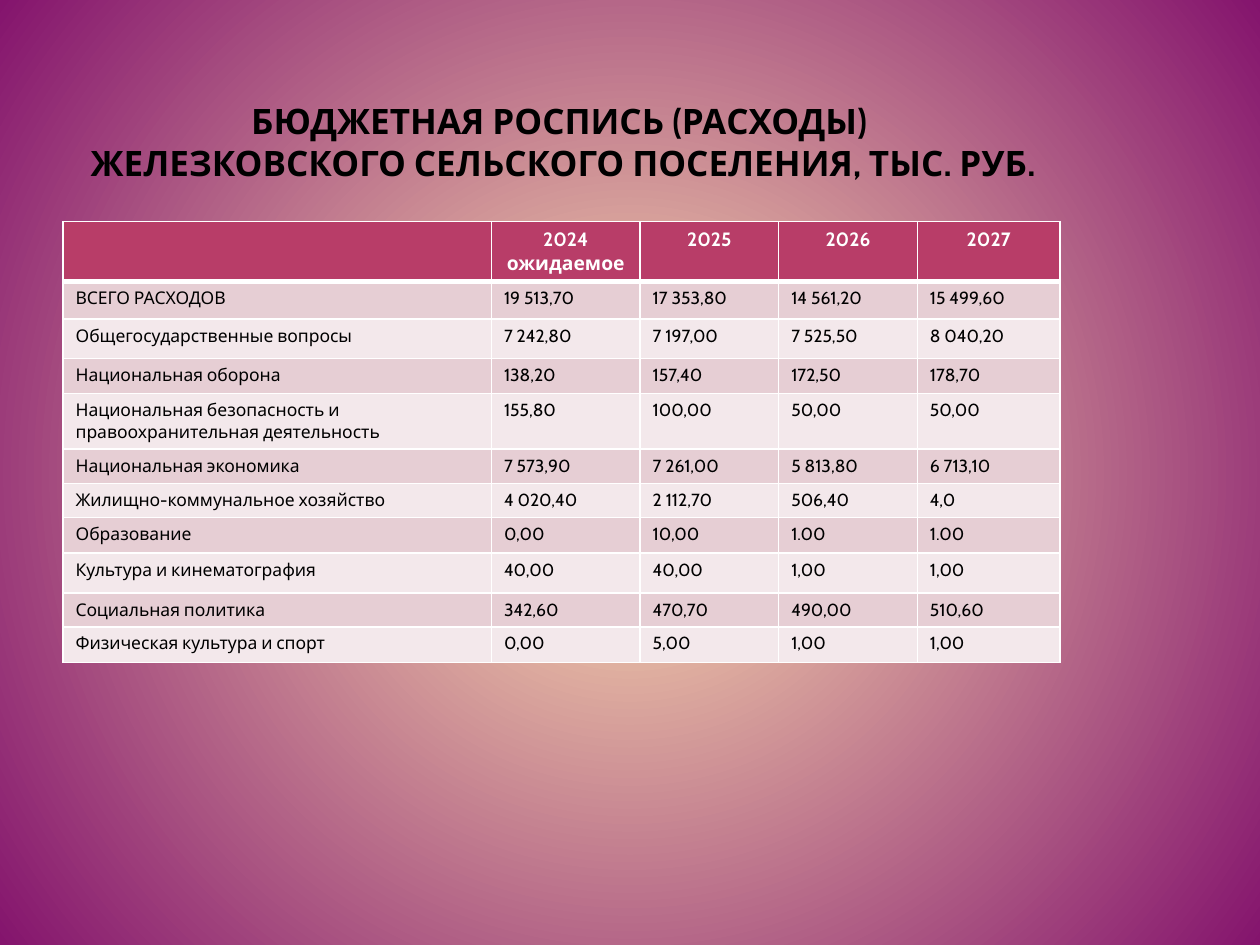
from pptx import Presentation
from pptx.dml.color import RGBColor
from pptx.enum.text import MSO_ANCHOR, MSO_AUTO_SIZE, PP_ALIGN
from pptx.oxml import parse_xml
from pptx.oxml.ns import nsdecls, qn
from pptx.util import Pt

FONT = "Cabin"
CREAM = RGBColor(0xFD, 0xE2, 0xB0)
PURPLE = RGBColor(0x84, 0x14, 0x6D)
CRIMSON = RGBColor(0xB8, 0x3D, 0x68)
BAND_DARK = RGBColor(0xE6, 0xCE, 0xD4)
BAND_LIGHT = RGBColor(0xF3, 0xE8, 0xEB)
BLACK = RGBColor(0, 0, 0)
WHITE = RGBColor(255, 255, 255)

TITLE = "БЮДЖЕТНАЯ РОСПИСЬ (РАСХОДЫ) \vЖЕЛЕЗКОВСКОГО СЕЛЬСКОГО ПОСЕЛЕНИЯ, ТЫС. РУБ."
BUDGET = [
    ("", "2024 ожидаемое", "2025", "2026", "2027"),
    ("ВСЕГО РАСХОДОВ", "19 513,70", "17 353,80", "14 561,20", "15 499,60"),
    ("Общегосударственные вопросы", "7 242,80", "7 197,00", "7 525,50", "8 040,20"),
    ("Национальная оборона", "138,20", "157,40", "172,50", "178,70"),
    ("Национальная безопасность и правоохранительная деятельность",
     "155,80", "100,00", "50,00", "50,00"),
    ("Национальная экономика", "7 573,90", "7 261,00", "5 813,80", "6 713,10"),
    ("Жилищно-коммунальное хозяйство", "4 020,40", "2 112,70", "506,40", "4,0"),
    ("Образование", "0,00", "10,00", "1.00", "1.00"),
    ("Культура и кинематография", "40,00", "40,00", "1,00", "1,00"),
    ("Социальная политика", "342,60", "470,70", "490,00", "510,60"),
    ("Физическая культура и спорт", "0,00", "5,00", "1,00", "1,00"),
]
COLUMN_WIDTHS = [244.8, 85, 79.2, 79.2, 81.6]
ROW_HEIGHTS = [33.9, 21.6, 22.6, 20, 31.6, 19.8, 19.4, 20.4, 22.7, 19.4, 20.4]


def write_text(frame, text, size, color, bold=False, align=PP_ALIGN.LEFT):
    """Put one formatted paragraph into a text frame."""
    para = frame.paragraphs[0]
    para.text = text
    para.alignment = align
    for span in para.runs:
        span.font.name = FONT
        span.font.size = Pt(size)
        span.font.bold = bold
        span.font.color.rgb = color


def paint_background(page):
    """Radial gradient from the centre to the corners."""
    fill = page.background.fill
    fill.gradient()
    for stop, color, position in zip(fill.gradient_stops, (CREAM, PURPLE), (0, 1)):
        stop.color.rgb = color
        stop.position = position
    gradient = page.element.find(".//" + qn("a:gradFill"))
    linear = gradient.find(qn("a:lin"))
    gradient.replace(linear, parse_xml(
        f'<a:path {nsdecls("a")} path="circle">'
        '<a:fillToRect l="50000" t="50000" r="50000" b="50000"/></a:path>'))


def add_title(page):
    box = page.shapes.title
    box.left, box.top, box.width, box.height = Pt(36.7), Pt(37.4), Pt(570), Pt(67.7)
    frame = box.text_frame
    frame.auto_size = MSO_AUTO_SIZE.NONE
    frame.word_wrap = True
    frame.vertical_anchor = MSO_ANCHOR.BOTTOM
    frame.margin_left = frame.margin_right = Pt(3.6)
    frame.margin_top = frame.margin_bottom = 0
    write_text(frame, TITLE, 20, BLACK, bold=True, align=PP_ALIGN.CENTER)


def set_borders(cell, bottom=1, top=1):
    """White cell borders; widths in points."""
    properties = cell._tc.get_or_add_tcPr()
    widths = {"lnL": 1, "lnR": 1, "lnT": top, "lnB": bottom}
    for index, (side, width) in enumerate(widths.items()):
        properties.insert(index, parse_xml(
            f'<a:{side} {nsdecls("a")} w="{Pt(width)}"><a:solidFill>'
            f'<a:srgbClr val="{WHITE}"/></a:solidFill></a:{side}>'))


def add_budget_table(page):
    table = page.shapes.add_table(
        len(BUDGET), len(COLUMN_WIDTHS), Pt(36), Pt(126.7),
        Pt(sum(COLUMN_WIDTHS)), Pt(sum(ROW_HEIGHTS))).table
    for column, width in zip(table.columns, COLUMN_WIDTHS):
        column.width = Pt(width)
    for row, height in zip(table.rows, ROW_HEIGHTS):
        row.height = Pt(height)

    for row_index, values in enumerate(BUDGET):
        header = row_index == 0
        band = BAND_DARK if row_index % 2 else BAND_LIGHT
        for column_index, value in enumerate(values):
            cell = table.cell(row_index, column_index)
            cell.fill.solid()
            cell.fill.fore_color.rgb = CRIMSON if header else band
            set_borders(cell, bottom=3 if header else 1, top=3 if row_index == 1 else 1)
            if header:
                write_text(cell.text_frame, value, 11, WHITE, bold=True,
                           align=PP_ALIGN.CENTER)
            else:
                write_text(cell.text_frame, value, 10, BLACK)


def main():
    deck = Presentation()
    deck.slide_width, deck.slide_height = Pt(720), Pt(540)
    page = deck.slides.add_slide(deck.slide_layouts[5])  # title only
    paint_background(page)
    add_title(page)
    add_budget_table(page)
    deck.save("out.pptx")


if __name__ == "__main__":
    main()
